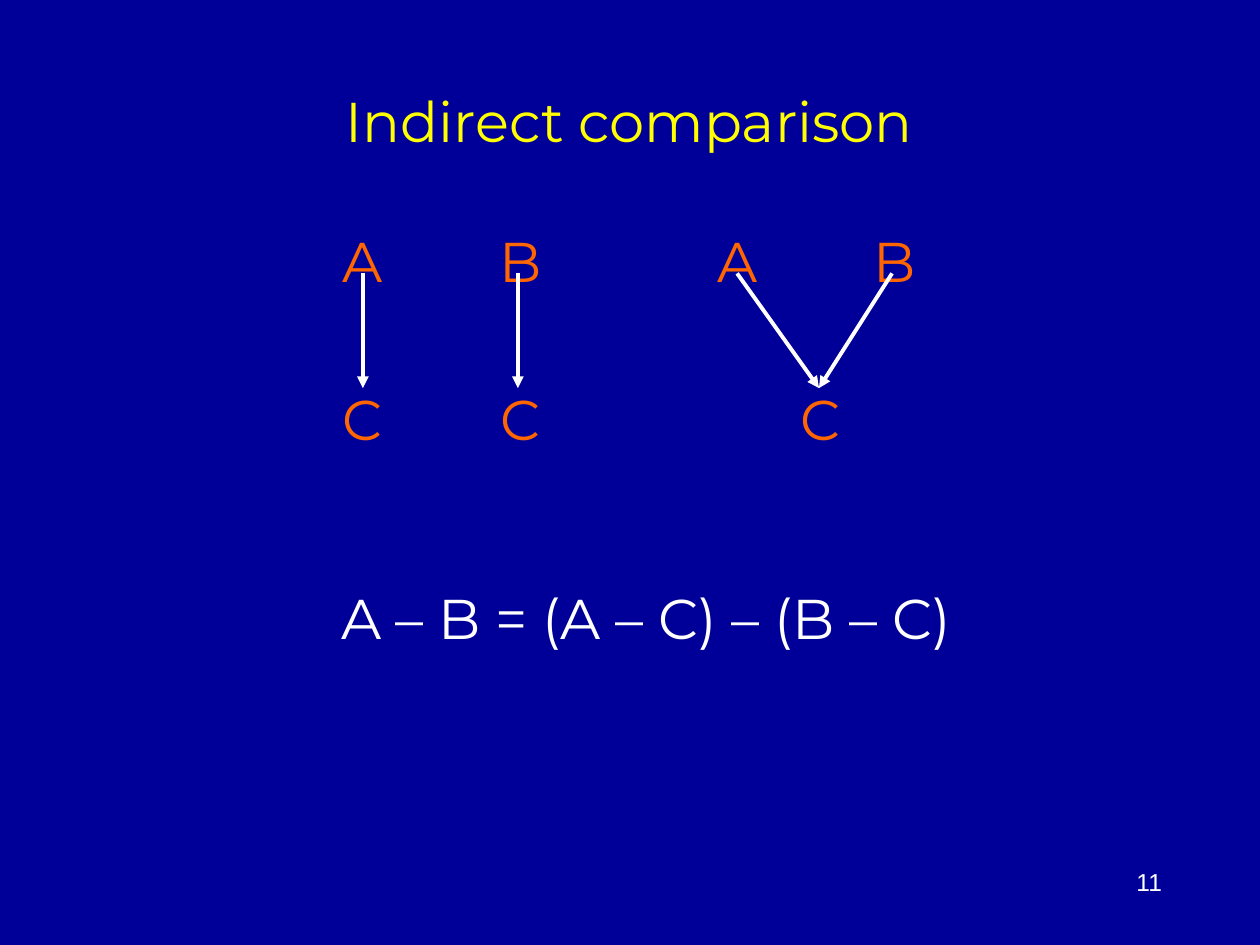
from pptx import Presentation
from pptx.dml.color import RGBColor
from pptx.enum.shapes import MSO_CONNECTOR
from pptx.enum.text import MSO_ANCHOR, MSO_AUTO_SIZE, PP_ALIGN
from pptx.oxml.ns import qn
from pptx.util import Inches, Pt
from lxml.etree import SubElement

COLS, ROWS = 10, 7.5  # grid cells across and down the slide


def paint(code):
    return RGBColor.from_string(code)


class Deck:
    face = "Montserrat"
    white, gold, flame, navy = "FFFFFF", "FFFF00", "FF6600", "000099"

    def __init__(self):
        self.prs = Presentation()
        self.prs.slide_width, self.prs.slide_height = Inches(10), Inches(7.5)
        self.slide = self.prs.slides.add_slide(self.prs.slide_layouts[5])
        fill = self.slide.background.fill
        fill.solid()
        fill.fore_color.rgb = paint(self.navy)

    def spot(self, col, row):
        """Turn grid columns and rows into slide lengths."""
        return (round(self.prs.slide_width * col / COLS),
                round(self.prs.slide_height * row / ROWS))

    def label(self, shape, text, color, size=32, face=face,
              align=PP_ALIGN.CENTER, **form):
        frame = shape.text_frame
        frame.text = text
        for name, value in form.items():
            setattr(frame, name, value)
        para = frame.paragraphs[0]
        para.alignment = align
        font = para.runs[0].font
        for name, value in {"name": face, "size": Pt(size)}.items():
            setattr(font, name, value)
        font.color.rgb = paint(color)

    def title(self, text, left, top, width, height):
        head = self.slide.shapes.title
        head.left, head.top = self.spot(left, top)
        head.width, head.height = self.spot(width, height)
        self.label(head, text, self.gold, word_wrap=True,
                   vertical_anchor=MSO_ANCHOR.MIDDLE,
                   auto_size=MSO_AUTO_SIZE.NONE)

    def text(self, text, left, top, width, height, color, **form):
        box = self.slide.shapes.add_textbox(
            *self.spot(left, top), *self.spot(width, height))
        self.label(box, text, color, **{"word_wrap": True, **form})

    def node(self, text, mid, top):
        """Place a letter centred on a column."""
        wide = 0.55
        self.text(text, mid - wide / 2, top, wide, 0.64, self.flame,
                  word_wrap=False, auto_size=MSO_AUTO_SIZE.SHAPE_TO_FIT_TEXT)

    def arrow(self, start, end):
        link = self.slide.shapes.add_connector(
            MSO_CONNECTOR.STRAIGHT, *self.spot(*start), *self.spot(*end))
        link.line.color.rgb = paint(self.white)
        link.line.width = Pt(2.25)
        props = link._element.spPr
        SubElement(props.find(qn("a:ln")), qn("a:tailEnd"), type="triangle")
        SubElement(props, qn("a:effectLst"))


def main():
    deck = Deck()
    deck.title("Indirect comparison", 0.75, 0.33, 8.49, 1.24)

    high, low = 1.75, 3
    tail, tip = 2.17, 3.08
    gap = 1.25
    pair, fork = 2.88, 5.85  # column of each group's A
    for base in (pair, fork):
        for step, name in enumerate("AB"):
            deck.node(name, base + step * gap, high)
    for mid in (pair, pair + gap, 6.51):
        deck.node("C", mid, low)

    for start, end in ((pair, pair), (4.11, 4.11), (fork, 6.5), (7.08, 6.5)):
        deck.arrow((start, tail), (end, tip))

    deck.text("A – B = (A – C) – (B – C)", 1.92, 4.58, 6.42, 0.64, deck.white,
              auto_size=MSO_AUTO_SIZE.SHAPE_TO_FIT_TEXT)
    deck.text("11", 7.25, 6.83, 2.07, 0.49, deck.white,
              size=14, face="Arial", align=PP_ALIGN.RIGHT)
    deck.prs.save("out.pptx")


if __name__ == "__main__":
    main()
